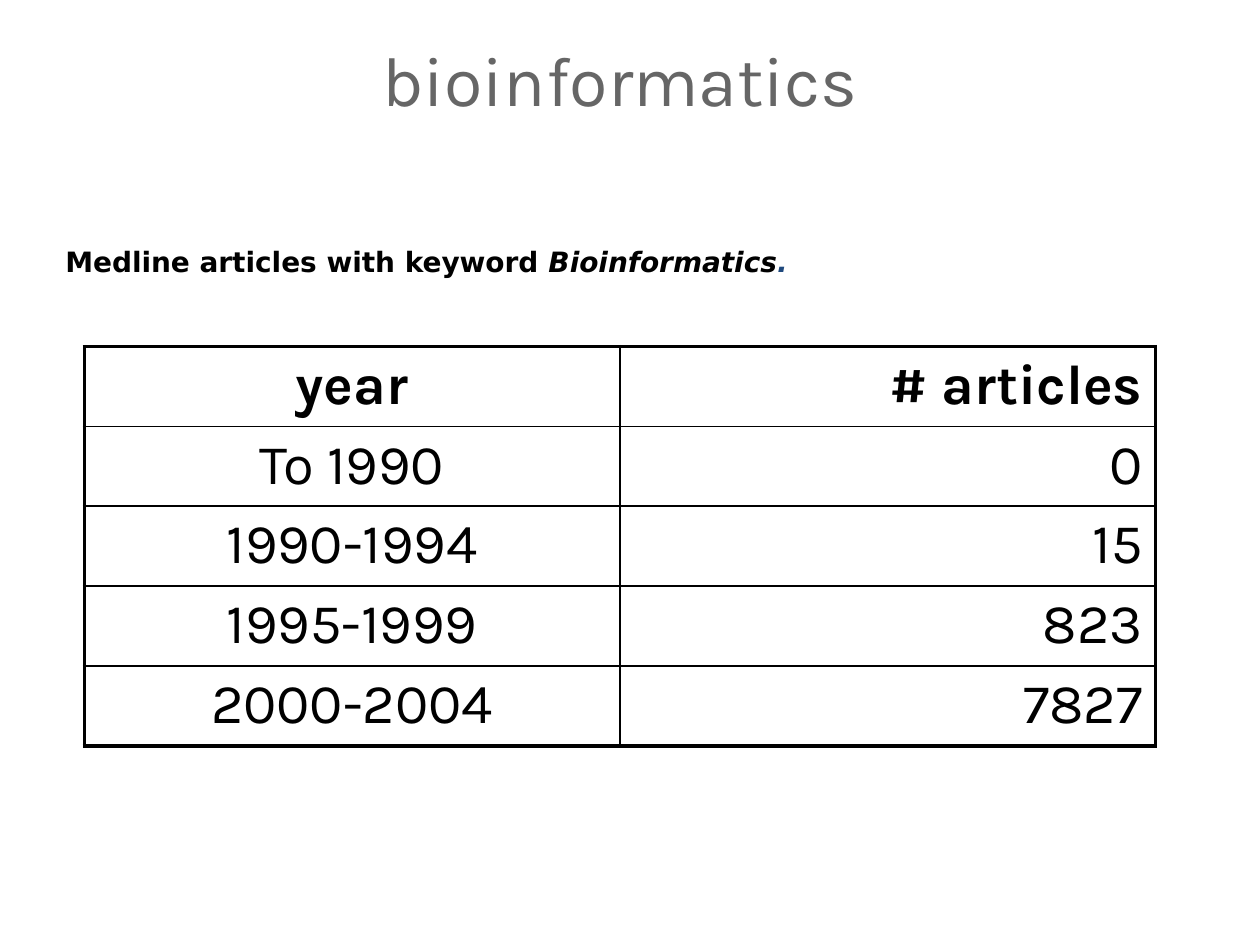
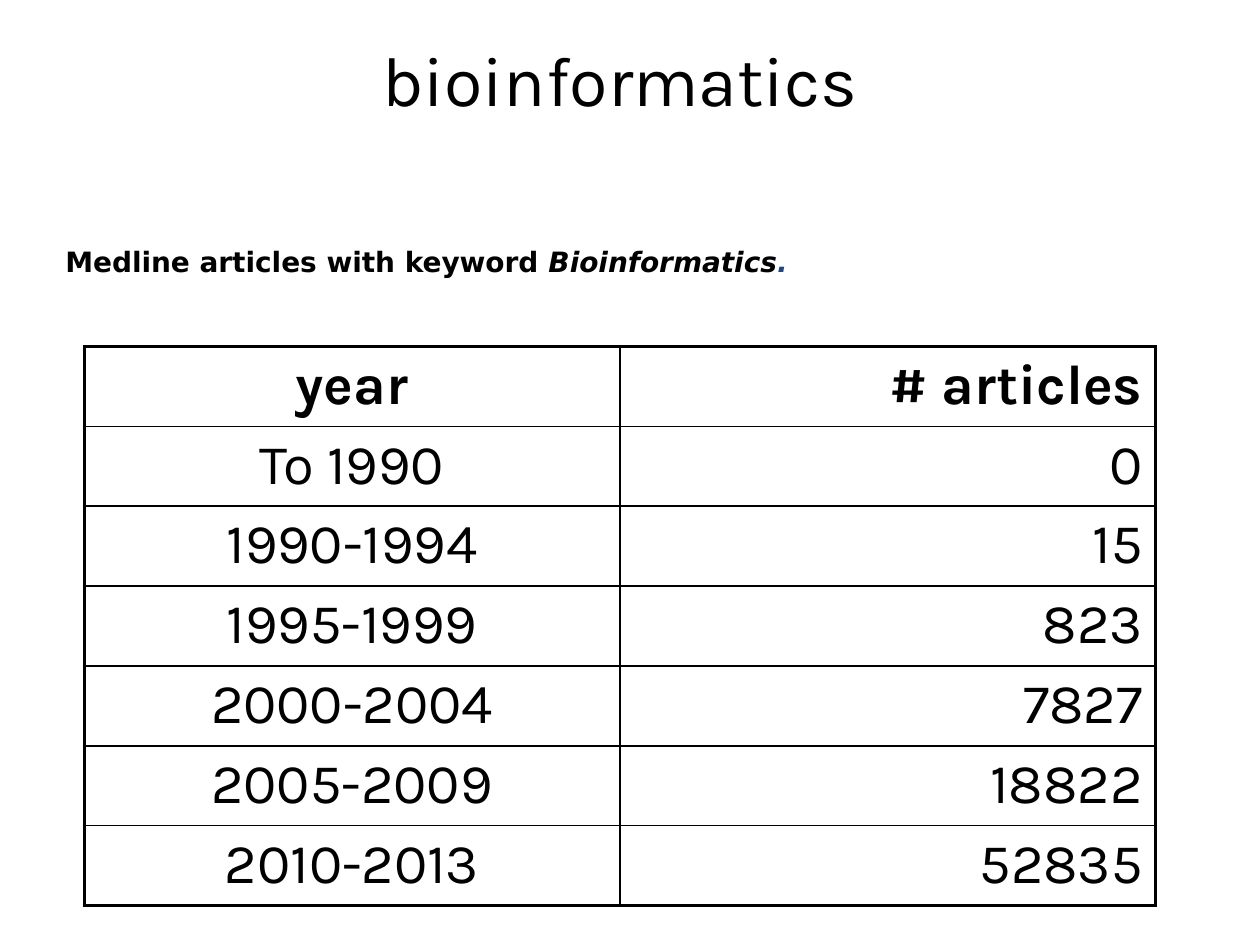
from pptx import Presentation
from pptx.dml.color import RGBColor
from pptx.enum.text import MSO_ANCHOR, MSO_AUTO_SIZE, PP_ALIGN
from pptx.oxml import parse_xml
from pptx.oxml.ns import nsdecls
from pptx.util import Inches, Pt

BLACK = RGBColor(0x00, 0x00, 0x00)
GRAY = RGBColor(0x66, 0x66, 0x66)
NAVY = RGBColor(0x1F, 0x49, 0x7D)
LEFT, CENTER, RIGHT = PP_ALIGN.LEFT, PP_ALIGN.CENTER, PP_ALIGN.RIGHT
MIDDLE = MSO_ANCHOR.MIDDLE
FIXED = MSO_AUTO_SIZE.NONE
TITLE_ONLY = 5

THICK, THIN = 2.25, 1
HEAD = ("year", "# articles")
COUNTS = [
    ("To 1990", "0"),
    ("1990-1994", "15"),
    ("1995-1999", "823"),
    ("2000-2004", "7827"),
]
LATER = [("2005-2009", "18822"), ("2010-2013", "52835")]


def write(para, text, size=32, font="Karla", color=BLACK, bold=False,
          italic=False, align=LEFT):
    """Add one formatted run to a paragraph."""
    para.alignment = align
    run = para.add_run()
    run.text = text
    face = run.font
    face.size, face.name = Pt(size), font
    face.bold, face.italic = bold, italic
    face.color.rgb = color


def edge(cell, side, width):
    """Draw one border of a cell; side is L, R, T or B."""
    cell._tc.get_or_add_tcPr().append(parse_xml(
        f'<a:ln{side} {nsdecls("a")} w="{Pt(width)}"><a:solidFill>'
        f'<a:srgbClr val="{BLACK}"/></a:solidFill></a:ln{side}>'))


class Deck:
    left, width = Inches(0.67), Inches(8.5)
    row = Inches(0.62)

    def __init__(self):
        self.prs = Presentation()
        self.prs.slide_width = Inches(10)
        self.prs.slide_height = Inches(7.5)
        self.slide = None

    def start(self, title, color):
        layout = self.prs.slide_layouts[TITLE_ONLY]
        self.slide = self.prs.slides.add_slide(layout)
        box = self.slide.shapes.title
        box.left, box.top = self.left, Inches(0)
        box.width, box.height = self.width, Inches(1.25)
        frame = box.text_frame
        frame.auto_size, frame.vertical_anchor = FIXED, MIDDLE
        write(frame.paragraphs[0], title, size=40, color=color, align=CENTER)

    def caption(self):
        box = self.slide.shapes.add_textbox(
            Inches(0.42), Inches(1.92), Inches(9.58), Inches(0.58))
        box.text_frame.word_wrap = True
        para = box.text_frame.paragraphs[0]
        para.line_spacing = 0.9
        style = dict(size=16, font="DejaVu Sans", bold=True)
        write(para, "Medline articles with keyword ", **style)
        write(para, "Bioinformatics", italic=True, **style)
        write(para, ".", italic=True, color=NAVY, **style)

    def table(self, rows):
        count = len(rows)
        grid = self.slide.shapes.add_table(
            count, 2, self.left, Inches(2.75), self.width,
            self.row * count).table
        grid.first_row = grid.horz_banding = False
        for r, pair in enumerate(rows):
            grid.rows[r].height = self.row
            for c, text in enumerate(pair):
                cell = grid.cell(r, c)
                outer = {"L": c == 0, "R": c == 1,
                         "T": r == 0, "B": r == count - 1}
                for side, thick in outer.items():
                    edge(cell, side, THICK if thick else THIN)
                cell.fill.background()
                write(cell.text_frame.paragraphs[0], text, bold=r == 0,
                      align=(CENTER, RIGHT)[c])


def main():
    deck = Deck()
    for color, counts in ((GRAY, COUNTS), (BLACK, COUNTS + LATER)):
        deck.start("bioinformatics", color)
        deck.caption()
        deck.table([HEAD] + counts)
    deck.prs.save("out.pptx")


if __name__ == "__main__":
    main()
